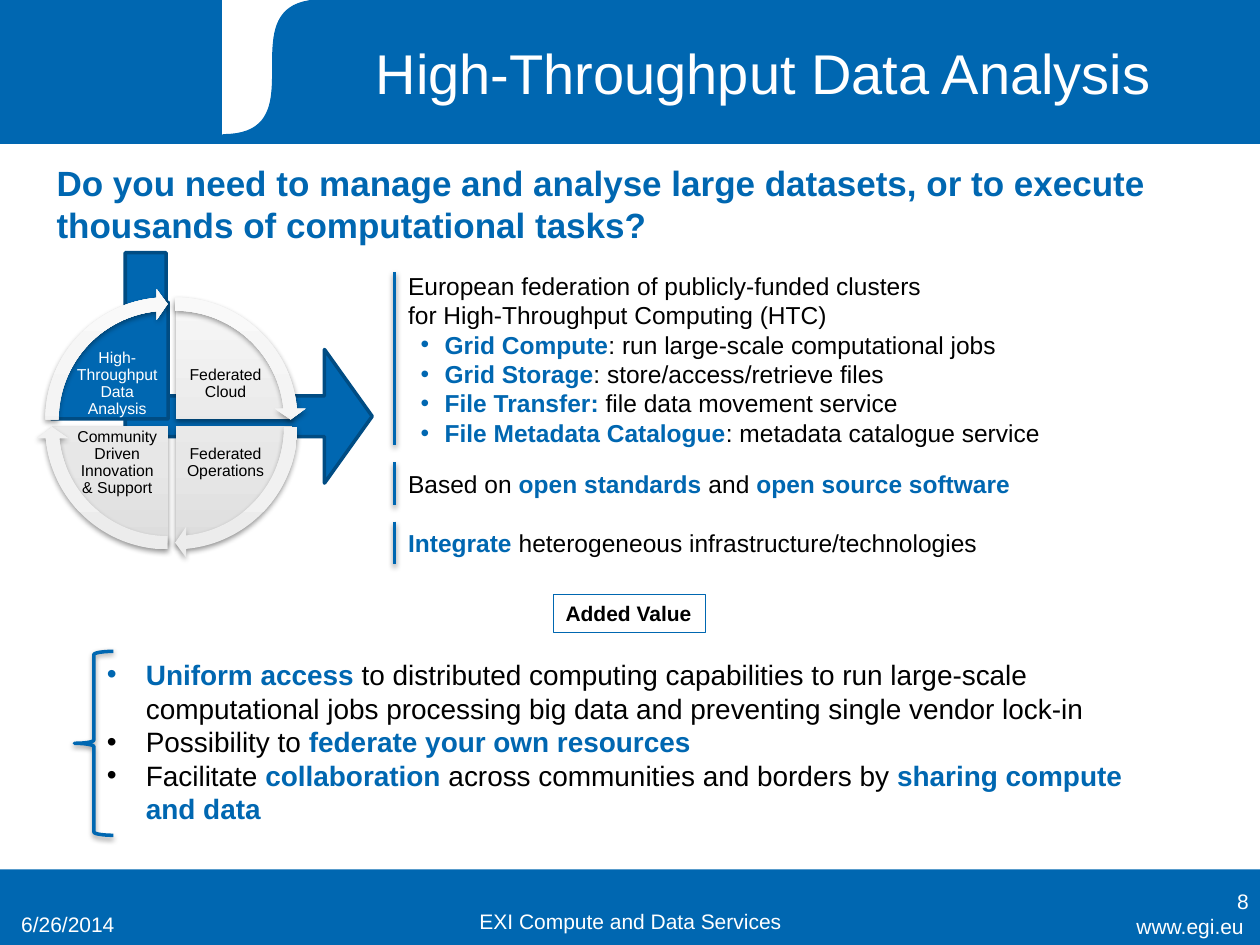
from pptx import Presentation
from pptx.dml.color import RGBColor
from pptx.enum.shapes import MSO_CONNECTOR, MSO_SHAPE
from pptx.enum.text import MSO_ANCHOR, PP_ALIGN
from pptx.oxml import parse_xml
from pptx.oxml.ns import nsdecls, qn
from pptx.util import Inches, Pt

BLUE, DARK_BLUE, WHITE, BLACK = "0067B1", "004C83", "FFFFFF", "000000"
PIE_SHADES = ((0, "DDDDDD"), (35, "E7E7E7"), (100, "F6F6F6"))
ARROW_SHADES = ((0, "ECECEC"), (35, "F1F1F1"), (100, "F9F9F9"))


def color(value):
    return RGBColor.from_string(value)


def set_effects(shape, shadow):
    """Replace the theme effect by a soft drop shadow or by nothing."""
    properties = shape._element.spPr
    for effects in properties.findall(qn("a:effectLst")):
        properties.remove(effects)
    drop = ('<a:outerShdw blurRad="40000" dist="20000" dir="5400000" rotWithShape="0">'
            '<a:srgbClr val="000000"><a:alpha val="38000"/></a:srgbClr></a:outerShdw>')
    properties.append(parse_xml(
        f'<a:effectLst {nsdecls("a")}>{drop if shadow else ""}</a:effectLst>'))


def shade(shape, stops):
    """Fill with a gradient that runs from bottom to top."""
    shape.fill.gradient()
    gradient = shape._element.spPr.find(qn("a:gradFill"))
    marks = "".join(f'<a:gs pos="{pos * 1000}"><a:srgbClr val="{value}"/></a:gs>'
                    for pos, value in stops)
    gradient.getparent().replace(gradient, parse_xml(
        f'<a:gradFill {nsdecls("a")} rotWithShape="1"><a:gsLst>{marks}</a:gsLst>'
        '<a:lin ang="16200000" scaled="0"/></a:gradFill>'))


def style(shape, fill=None, line=None, width=0.75, shadow=False):
    if isinstance(fill, tuple):
        shade(shape, fill)
    elif fill:
        shape.fill.solid()
        shape.fill.fore_color.rgb = color(fill)
    else:
        shape.fill.background()
    if line:
        shape.line.color.rgb = color(line)
        shape.line.width = Pt(width)
    else:
        shape.line.fill.background()
    set_effects(shape, shadow)


def add_preset(page, kind, box, adjustments=(), **look):
    shape = page.shapes.add_shape(kind, *map(Inches, box))
    for index, value in enumerate(adjustments):
        shape.adjustments[index] = value
    style(shape, **look)
    return shape


def add_rule(page, x, top, bottom):
    rule = page.shapes.add_connector(
        MSO_CONNECTOR.STRAIGHT, Inches(x), Inches(top), Inches(x), Inches(bottom))
    rule.line.color.rgb = color(BLUE)
    rule.line.width = Pt(2)
    set_effects(rule, True)


def write(frame, paragraphs, size, base=BLACK, align=PP_ALIGN.LEFT,
          anchor=MSO_ANCHOR.TOP, margin=None, spacing=None, bold=False, indents=None):
    """Each paragraph is (bulleted, runs); text marked with * is bold blue."""
    frame.word_wrap = True
    frame.vertical_anchor = anchor
    if margin is not None:
        frame.margin_left = frame.margin_right = Inches(margin)
        frame.margin_top = frame.margin_bottom = Inches(margin)
    for index, (bulleted, runs) in enumerate(paragraphs):
        para = frame.paragraphs[0] if index == 0 else frame.add_paragraph()
        para.alignment = align
        if spacing:
            para.line_spacing = spacing
        if bulleted:
            left, hanging = indents
            properties = para._p.get_or_add_pPr()
            properties.set("marL", str(Inches(left)))
            properties.set("indent", str(-Inches(hanging)))
            properties.append(parse_xml(f'<a:buFont {nsdecls("a")} typeface="Arial"/>'))
            properties.append(parse_xml(f'<a:buChar {nsdecls("a")} char="•"/>'))
        for part, text in enumerate(runs.split("*")):
            if not text:
                continue
            marked = part % 2 == 1
            span = para.add_run()
            span.text = text
            span.font.name = "Arial"
            span.font.size = Pt(size)
            span.font.bold = bold or marked
            span.font.color.rgb = color(BLUE if marked else base)


def add_text(page, box, paragraphs, size, **options):
    if isinstance(paragraphs, str):
        paragraphs = [(False, paragraphs)]
    label = page.shapes.add_textbox(*map(Inches, box))
    write(label.text_frame, paragraphs, size, **options)


def add_header(page, left, top, width, height):
    add_preset(page, MSO_SHAPE.RECTANGLE, (left, top, width, height), fill=BLUE, line=BLUE)
    # White notch, covered on its right by a blue S-curve
    start, end, base = left + 1.77, left + 3.74, top + 1.07
    add_preset(page, MSO_SHAPE.RECTANGLE, (start, top, end - start, base - top),
               fill=WHITE, line=WHITE)
    curve = []
    for step in range(1, 41):
        t = step / 40
        x = start + 0.79 * (3 * t * (1 - t) ** 2 + t ** 3)
        y = top + (base - top) * ((1 - t) ** 3 + 3 * t * (1 - t) ** 2)
        curve.append((Inches(x), Inches(y)))
    builder = page.shapes.build_freeform(Inches(end), Inches(top))
    builder.add_line_segments([(Inches(end), Inches(base)), (Inches(start), Inches(base)), *curve])
    style(builder.convert_to_shape(), fill=BLUE, line=BLUE)
    add_text(page, (left + 2.32, top + 0.13, 7.48, 0.95), "High-Throughput Data Analysis", 32,
             base=WHITE, align=PP_ALIGN.CENTER, anchor=MSO_ANCHOR.MIDDLE, spacing=0.9)


def add_footer(page, left, top, width, height):
    add_preset(page, MSO_SHAPE.RECTANGLE, (left, top, width, height), fill=BLUE)
    entries = (
        ((8.39, 0.3, 1.58, 0.31), "www.egi.eu", PP_ALIGN.RIGHT, MSO_ANCHOR.TOP),
        ((0.07, 0.18, 2.33, 0.4), "6/26/2014", PP_ALIGN.LEFT, MSO_ANCHOR.BOTTOM),
        ((3.42, 0.16, 3.17, 0.4), "EXI Compute and Data Services", PP_ALIGN.CENTER,
         MSO_ANCHOR.BOTTOM),
        ((7.68, 0.05, 2.33, 0.4), "8", PP_ALIGN.RIGHT, MSO_ANCHOR.MIDDLE),
    )
    for (x, y, w, h), text, align, anchor in entries:
        add_text(page, (left + x, top + y, w, h), text, 12, base=WHITE, align=align, anchor=anchor)


def add_services(page, left, top, width):
    federation = [
        (False, "European federation of publicly-funded clusters"),
        (False, "for High-Throughput Computing (HTC)"),
        (True, "*Grid Compute*: run large-scale computational jobs"),
        (True, "*Grid Storage*: store/access/retrieve files"),
        (True, "*File Transfer:* file data movement service"),
        (True, "*File Metadata Catalogue*: metadata catalogue service"),
    ]
    standards = [(False, "Based on *open standards* and *open source software*")]
    integration = [(False, "*Integrate *heterogeneous infrastructure/technologies")]
    # Text offset, text height, rule offset, rule height
    for paragraphs, y, height, rule_y, rule_height in (
            (federation, 0, 1.51, 0.06, 1.37),
            (standards, 1.57, 0.34, 1.57, 0.34),
            (integration, 2.04, 0.34, 2.04, 0.34)):
        add_text(page, (left, top + y, width, height), paragraphs, 14, indents=(0.29, 0.19))
        add_rule(page, left - 0.01, top + rule_y, top + rule_y + rule_height)


def add_wheel(page, left, top):
    # Bent arrow from the question to the services
    arrow = add_preset(page, MSO_SHAPE.BENT_UP_ARROW, (left + 0.77, top - 0.35, 1.83, 1.96),
                       (0.177, 0.29, 0.207), fill=BLUE, line=DARK_BLUE, width=2)
    arrow.rotation = 270
    for flip in ("flipH", "flipV"):
        arrow._element.spPr.find(qn("a:xfrm")).set(flip, "1")

    # Clockwise from top right; a quarter turn is 54 adjustment units
    quarter, gap = 54, 0.06
    quadrants = (("Federated Cloud", 1, 0, 162), ("Federated Operations", 1, 1, 0),
                 ("Community Driven Innovation & Support", 0, 1, 54),
                 ("High-Throughput Data Analysis", 0, 0, 108))
    for name, column, row, start in quadrants:
        current = start == 108
        look = (dict(fill=BLUE, line=DARK_BLUE, width=2) if current
                else dict(fill=PIE_SHADES, shadow=True))
        add_preset(page, MSO_SHAPE.PIE,
                   (left + 0.12 + gap * column, top + 0.11 + gap * row, 1.85, 1.85),
                   (start, (start + quarter) % 216), **look)
        add_text(page, (left + 0.3 + 0.86 * column, top + 0.5 + 0.63 * row, 0.68, 0.51),
                 name, 9, base=WHITE if current else BLACK, align=PP_ALIGN.CENTER,
                 anchor=MSO_ANCHOR.MIDDLE, margin=0.01, spacing=0.9)
    for _, column, row, start in quadrants:
        add_preset(page, MSO_SHAPE.CIRCULAR_ARROW,
                   (left + gap * column, top + gap * row, 2.08, 2.08),
                   (0.051, 3.275, start + 50.725, start, 0.059),
                   fill=ARROW_SHADES, shadow=True)


def add_benefits(page, left, top, width, height):
    heading = add_preset(page, MSO_SHAPE.RECTANGLE, (left + 3.8, top - 0.45, 1.21, 0.3),
                         fill=WHITE, line=BLUE, width=0.25)
    write(heading.text_frame, [(False, "Added Value")], 12, bold=True)
    heading.text_frame.word_wrap = False
    add_text(page, (left + 0.16, top, width - 0.16, height), [
        (True, "*Uniform access *to distributed computing capabilities to run large-scale "
               "computational jobs processing big data and preventing single vendor lock-in"),
        (True, "Possibility to *federate your own resources*"),
        (True, "Facilitate *collaboration *across communities and borders by "
               "*sharing compute and data*"),
    ], 16, indents=(0.31, 0.31))
    add_preset(page, MSO_SHAPE.LEFT_BRACE, (left, top, 0.31, height),
               line=BLUE, width=2, shadow=True)


def main():
    deck = Presentation()
    deck.slide_width, deck.slide_height = Inches(10), Inches(7.5)
    page = deck.slides.add_slide(deck.slide_layouts[6])
    add_footer(page, 0, 6.9, 10, 0.6)
    add_header(page, 0, 0, 10, 1.14)
    add_text(page, (0.35, 1.23, 9.21, 0.77), "Do you need to manage and analyse large datasets, "
             "or to execute thousands of computational tasks?", 20, base=BLUE, bold=True)
    add_services(page, 3.14, 2.1, 6.42)
    add_wheel(page, 0.29, 2.29)
    add_benefits(page, 0.59, 5.17, 8.82, 1.46)
    deck.save("out.pptx")


if __name__ == "__main__":
    main()
